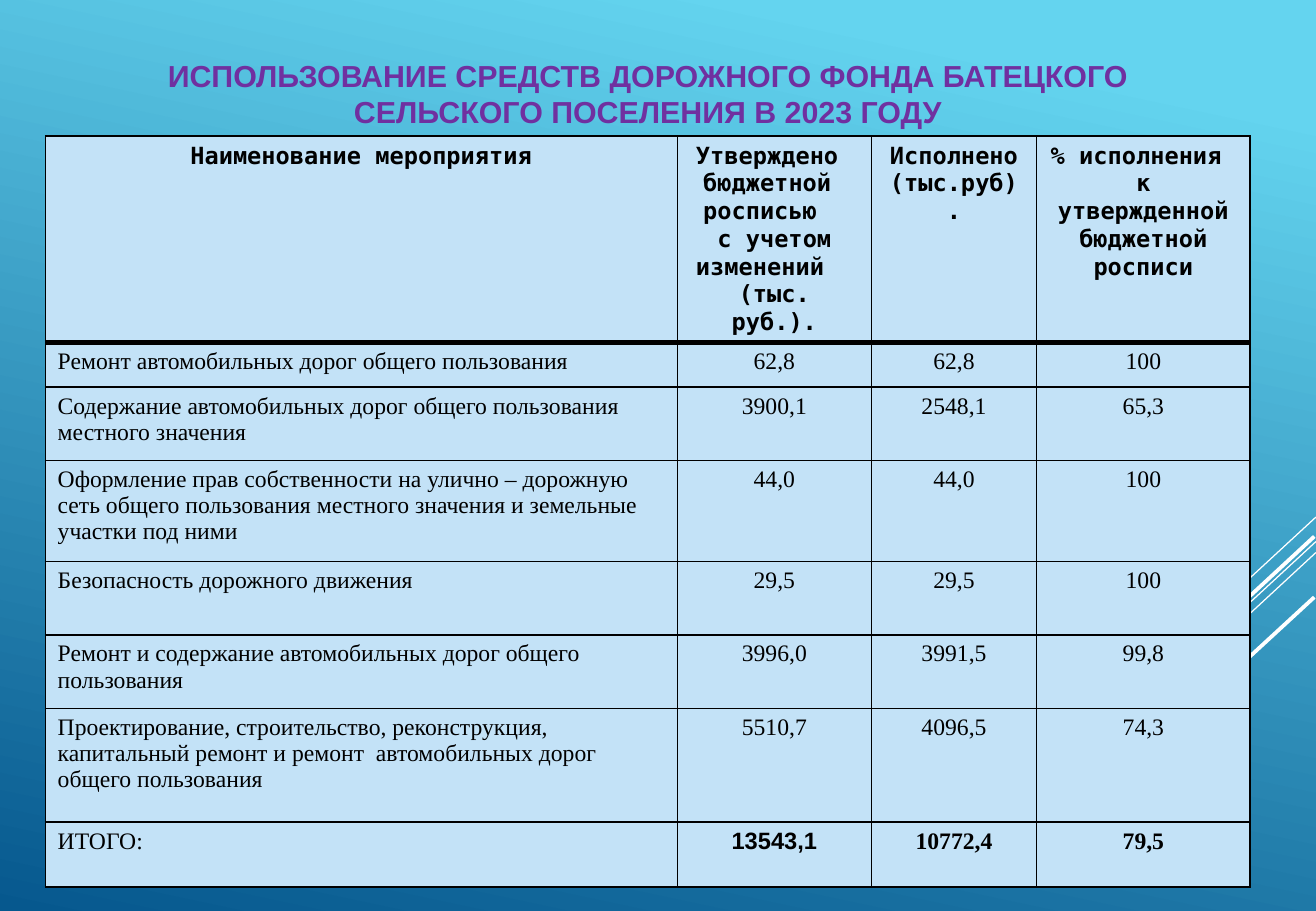
from lxml.etree import SubElement
from pptx import Presentation
from pptx.dml.color import RGBColor
from pptx.enum.shapes import MSO_CONNECTOR
from pptx.enum.text import MSO_AUTO_SIZE, PP_ALIGN
from pptx.oxml.ns import qn
from pptx.util import Pt

COLORS = {
    "sky": "64D4EF",
    "deep": "06588E",
    "cell": "C3E2F7",
    "title": "7030A0",
    "text": "000000",
    "ray": "FFFFFF",
}
TITLE = [
    "ИСПОЛЬЗОВАНИЕ СРЕДСТВ ДОРОЖНОГО ФОНДА БАТЕЦКОГО",
    "СЕЛЬСКОГО ПОСЕЛЕНИЯ В 2023 ГОДУ",
]
ROWS = [
    ("Наименование мероприятия",
     "Утверждено  бюджетной  росписью   с учетом изменений   (тыс. руб.).",
     "Исполнено (тыс.руб).",
     "% исполнения  к утвержденной бюджетной росписи"),
    ("Ремонт автомобильных дорог общего пользования", "62,8", "62,8", "100"),
    ("Содержание автомобильных дорог общего пользования местного значения",
     "3900,1", "2548,1", "65,3"),
    ("Оформление прав собственности на улично – дорожную сеть общего "
     "пользования местного значения и земельные участки под ними",
     "44,0", "44,0", "100"),
    ("Безопасность дорожного движения", "29,5", "29,5", "100"),
    ("Ремонт и содержание автомобильных дорог общего пользования",
     "3996,0", "3991,5", "99,8"),
    ("Проектирование, строительство, реконструкция, капитальный ремонт "
     "и ремонт  автомобильных дорог общего пользования",
     "5510,7", "4096,5", "74,3"),
    ("ИТОГО:", "13543,1", "10772,4", "79,5"),
]
COL_WIDTHS = [374.5, 115, 98, 126.5]
ROW_HEIGHTS = [122, 26.5, 43.5, 60, 43.5, 43.5, 67.5, 38.5]
RAYS = [
    (211, 0, 146, 60, 0.75),
    (211, 14.5, 0, 209.5, 0.75),
    (211, 21, 77, 145, 0.75),
    (210, 11.5, 88, 124.5, 2.25),
    (210, 47.5, 121, 129.5, 2.25),
]


def rgb(name):
    return RGBColor.from_string(COLORS[name])


def style(p, font, size, color, bold, align):
    p.alignment = align
    for r in p.runs:
        r.font.name = font
        r.font.size = Pt(size)
        r.font.bold = bold
        r.font.color.rgb = rgb(color)


def add_background(s):
    fill = s.background.fill
    fill.gradient()
    fill.gradient_angle = 258
    for stop, position, name in zip(fill.gradient_stops, (0.1, 1), ("sky", "deep")):
        stop.position = position
        stop.color.rgb = rgb(name)


def add_rays(s, left, top):
    for x1, y1, x2, y2, width in RAYS:
        ray = s.shapes.add_connector(
            MSO_CONNECTOR.STRAIGHT,
            Pt(left + x1), Pt(top + y1), Pt(left + x2), Pt(top + y2))
        ray.line.color.rgb = rgb("ray")
        ray.line.width = Pt(width)
        SubElement(ray._element.spPr, qn("a:effectLst"))


def add_borders(cell, top, bottom):
    tcPr = cell._tc.get_or_add_tcPr()
    for side, width in (("L", 1), ("R", 1), ("T", top), ("B", bottom)):
        ln = SubElement(tcPr, qn(f"a:ln{side}"), w=str(Pt(width)))
        fill = SubElement(ln, qn("a:solidFill"))
        SubElement(fill, qn("a:srgbClr"), val=COLORS["text"])


def add_fund_table(s, left, top):
    table = s.shapes.add_table(
        len(ROWS), len(COL_WIDTHS), Pt(left), Pt(top),
        Pt(sum(COL_WIDTHS)), Pt(sum(ROW_HEIGHTS))).table
    table.horz_banding = False
    for column, width in zip(table.columns, COL_WIDTHS):
        column.width = Pt(width)
    for i, (row, height, values) in enumerate(zip(table.rows, ROW_HEIGHTS, ROWS)):
        row.height = Pt(height)
        header, total = i == 0, i == len(ROWS) - 1
        for j, (cell, value) in enumerate(zip(row.cells, values)):
            add_borders(cell, 3 if i == 1 else 1, 3 if header else 1)
            cell.fill.solid()
            cell.fill.fore_color.rgb = rgb("cell")
            cell.text_frame.text = value
            font = "DejaVu Sans Mono" if header else "Times New Roman"
            if total and j == 1:
                font = "Arial"
            align = PP_ALIGN.CENTER if header or j else PP_ALIGN.LEFT
            bold = header or (total and j > 0)
            style(cell.text_frame.paragraphs[0], font, 14, "text", bold, align)


def add_title(s, left, top, width, height):
    tf = s.shapes.add_textbox(Pt(left), Pt(top), Pt(width), Pt(height)).text_frame
    tf.word_wrap = True
    tf.auto_size = MSO_AUTO_SIZE.SHAPE_TO_FIT_TEXT
    tf.text = "\n".join(TITLE)
    for p in tf.paragraphs:
        style(p, "Arial", 18, "title", True, PP_ALIGN.CENTER)


def main():
    prs = Presentation()
    prs.slide_width, prs.slide_height = Pt(780), Pt(540)
    s = prs.slides.add_slide(prs.slide_layouts[6])
    add_background(s)
    add_rays(s, 569, 306.5)
    add_fund_table(s, 27, 80.6)
    add_title(s, 32.4, 30.2, 703.4, 51)
    prs.save("out.pptx")


if __name__ == "__main__":
    main()
